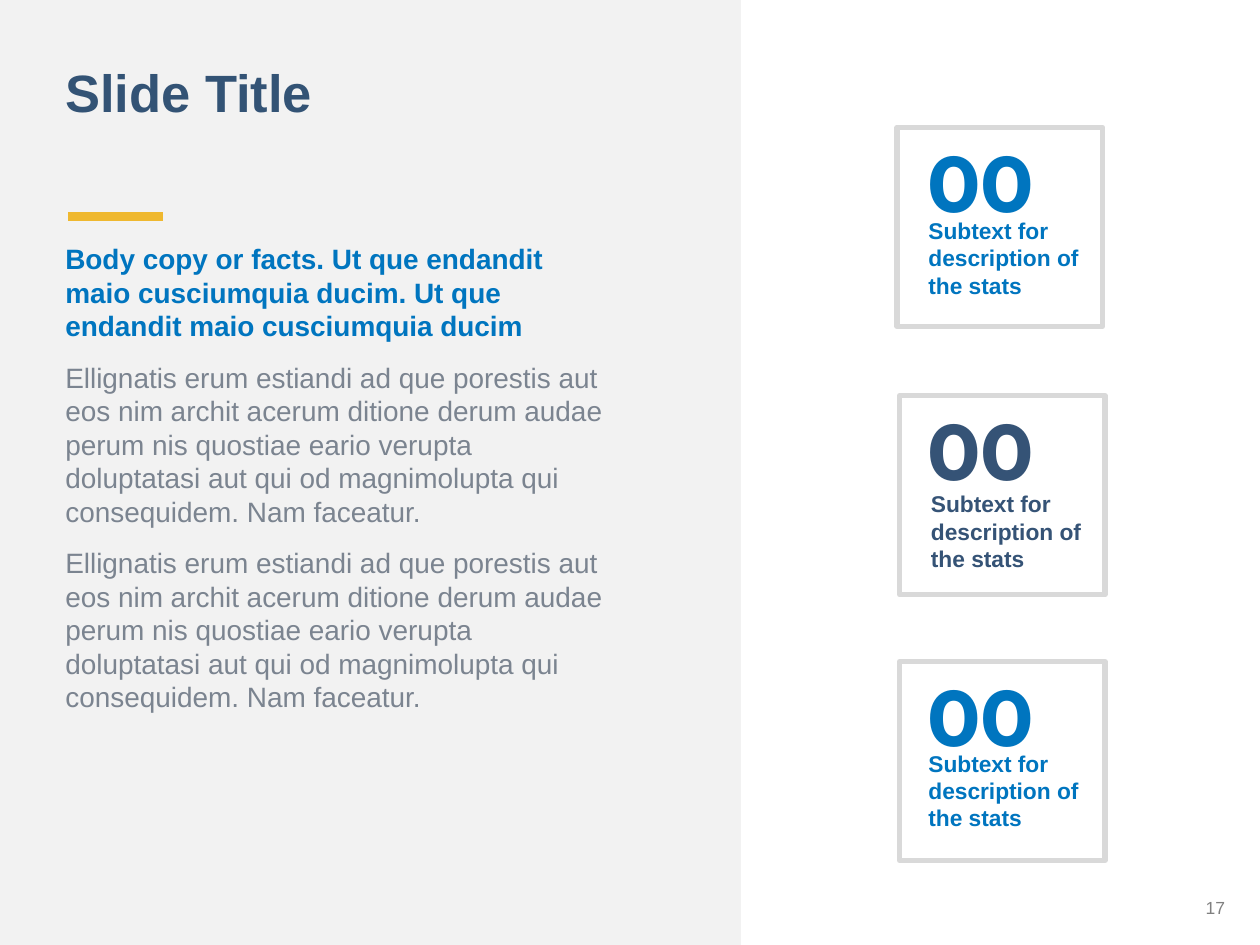
import pptx
import pptx.util
import pptx.dml.color
import pptx.enum.shapes
import pptx.enum.text
import pptx.oxml.ns
import lxml.etree

Inches, Pt = pptx.util.Inches, pptx.util.Pt
RGBColor = pptx.dml.color.RGBColor
ALIGN = pptx.enum.text.PP_ALIGN
ANCHOR = pptx.enum.text.MSO_ANCHOR
RECTANGLE = pptx.enum.shapes.MSO_SHAPE.RECTANGLE

PANEL = RGBColor(0xF2, 0xF2, 0xF2)
GOLD = RGBColor(0xEF, 0xB8, 0x2F)
TITLE_NAVY = RGBColor(0x33, 0x53, 0x75)
STAT_NAVY = RGBColor(0x35, 0x53, 0x76)
BLUE = RGBColor(0x00, 0x75, 0xBF)
BODY_GRAY = RGBColor(0x7B, 0x84, 0x90)
NUMBER_GRAY = RGBColor(0x80, 0x80, 0x80)
FRAME_GRAY = RGBColor(0xD9, 0xD9, 0xD9)

# Content
TITLE = "Slide Title"
LEAD = ("Body copy or facts. Ut que endandit maio cusciumquia ducim. "
        "Ut que endandit maio cusciumquia ducim")
DETAIL = ("Ellignatis erum estiandi ad que porestis aut eos nim archit acerum "
          "ditione derum audae perum nis quostiae eario verupta doluptatasi aut "
          "qui od magnimolupta qui consequidem. Nam faceatur.")
BODY = [(LEAD, BLUE, True), (DETAIL, BODY_GRAY, False), (DETAIL, BODY_GRAY, False)]
STAT_VALUE = "00"
STAT_LINES = ["Subtext for description of ", "the stats"]
PAGE_NUMBER = "17"
# Each stat: top, frame left, subtext left, subtext width, subtext drop, colour
STATS = [
    (1.01, 7.12, 7.27, 1.75, 0.66, BLUE),
    (3.14, 7.14, 7.29, 1.98, 0.70, STAT_NAVY),
    (5.25, 7.14, 7.27, 1.75, 0.65, BLUE),
]


def add_text_frame(slide, left, top, width, height):
    box = slide.shapes.add_textbox(Inches(left), Inches(top), Inches(width), Inches(height))
    box.text_frame.word_wrap = True
    return box.text_frame


def add_run(paragraph, text, size, color, bold=True, font="Arial"):
    run = paragraph.add_run()
    run.text = text
    run.font.name = font
    run.font.size = Pt(size)
    run.font.bold = bold
    run.font.color.rgb = color


def add_rectangle(slide, left, top, width, height):
    shape = slide.shapes.add_shape(
        RECTANGLE, Inches(left), Inches(top), Inches(width), Inches(height))
    shape.shadow.inherit = False
    return shape


def add_stat(slide, top, frame_left, text_left, text_width, drop, color):
    value = add_text_frame(slide, 7.26, top, 1.5, 0.86)
    add_run(value.paragraphs[0], STAT_VALUE, 45, color, font="Montserrat")

    paragraph = add_text_frame(slide, text_left, top + drop, text_width, 0.76).paragraphs[0]
    for index, line in enumerate(STAT_LINES):
        if index:
            paragraph.add_line_break()
        add_run(paragraph, line, 13, color)

    frame = add_rectangle(slide, frame_left, top, 1.63, 1.58)
    frame.fill.background()
    frame.line.color.rgb = FRAME_GRAY
    frame.line.width = Pt(3)


def main():
    presentation = pptx.Presentation()
    presentation.slide_width = Inches(10)
    presentation.slide_height = Inches(7.5)
    slide = presentation.slides.add_slide(presentation.slide_layouts[6])

    # Left panel
    panel = add_rectangle(slide, 0, 0, 5.88, 7.5)
    panel.fill.solid()
    panel.fill.fore_color.rgb = PANEL
    panel.line.fill.background()

    # Accent line
    accent = slide.shapes.add_connector(
        pptx.enum.shapes.MSO_CONNECTOR.STRAIGHT,
        Inches(0.54), Inches(1.72), Inches(1.29), Inches(1.72))
    accent.line.color.rgb = GOLD
    accent.line.width = Pt(5)
    lxml.etree.SubElement(accent._element.spPr, pptx.oxml.ns.qn("a:effectLst"))

    # Title
    paragraph = add_text_frame(slide, 0.42, 0.48, 4.98, 1.11).paragraphs[0]
    paragraph.line_spacing = 0.9
    paragraph.space_before = Pt(10)
    add_run(paragraph, TITLE, 30, TITLE_NAVY)

    # Body copy
    body = add_text_frame(slide, 0.42, 1.87, 4.49, 4.97)
    for index, (text, color, bold) in enumerate(BODY):
        paragraph = body.add_paragraph() if index else body.paragraphs[0]
        paragraph.space_before = Pt(10)
        add_run(paragraph, text, 16, color, bold)

    # Framed stats
    for stat in STATS:
        add_stat(slide, *stat)

    # Page number
    number = add_text_frame(slide, 7.57, 7.05, 2.25, 0.3)
    number.vertical_anchor = ANCHOR.MIDDLE
    number.paragraphs[0].alignment = ALIGN.RIGHT
    add_run(number.paragraphs[0], PAGE_NUMBER, 10, NUMBER_GRAY, bold=False)

    presentation.save("out.pptx")


if __name__ == "__main__":
    main()
